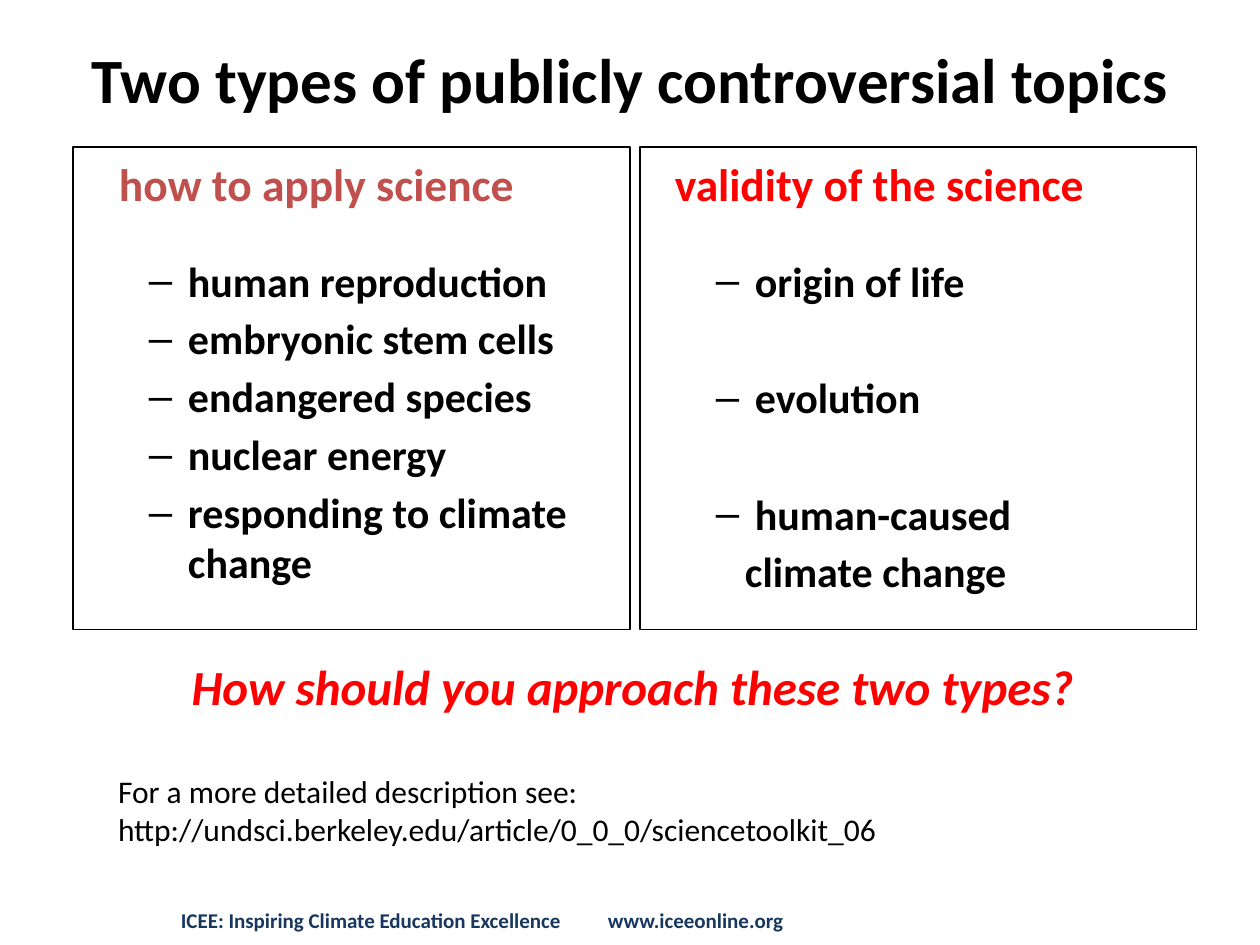
import pptx
import pptx.dml.color
import pptx.enum.shapes
import pptx.enum.text
import pptx.oxml
import pptx.oxml.ns
import pptx.util

PIXEL = 914400 // 126
BLACK = pptx.dml.color.RGBColor(0x00, 0x00, 0x00)
RED = pptx.dml.color.RGBColor(0xFF, 0x00, 0x00)
BRICK = pptx.dml.color.RGBColor(0xC0, 0x50, 0x4D)
NAVY = pptx.dml.color.RGBColor(0x17, 0x37, 0x5E)
FONT = "Calibri"
TOPICS_LEFT = [
    "human reproduction",
    "embryonic stem cells",
    "endangered species",
    "nuclear energy",
    "responding to climate change",
]
TOPICS_RIGHT = ["origin of life", "evolution", "human-caused"]
TOP = pptx.enum.text.MSO_ANCHOR.TOP
MIDDLE = pptx.enum.text.MSO_ANCHOR.MIDDLE
LEFT = pptx.enum.text.PP_ALIGN.LEFT
CENTER = pptx.enum.text.PP_ALIGN.CENTER


def px(value):
    return pptx.util.Emu(value * PIXEL)


def add_run(paragraph, text, size, color=BLACK, bold=True, italic=False):
    run = paragraph.add_run()
    run.text = text
    run.font.name = FONT
    run.font.size = pptx.util.Pt(size)
    run.font.color.rgb = color
    run.font.bold = bold
    run.font.italic = italic


def set_frame(frame, anchor=TOP, left=13, top=6):
    frame.word_wrap = True
    frame.vertical_anchor = anchor
    frame.margin_left, frame.margin_right = px(left), px(13)
    frame.margin_top = frame.margin_bottom = px(top)


def add_text_box(slide, box, alignment=LEFT, **frame_options):
    shape = slide.shapes.add_textbox(*map(px, box))
    set_frame(shape.text_frame, **frame_options)
    paragraph = shape.text_frame.paragraphs[0]
    paragraph.alignment = alignment
    return paragraph


def add_property(paragraph, tag, **attributes):
    properties = paragraph._p.get_or_add_pPr()
    element = pptx.oxml.parse_xml(f"<a:{tag} {pptx.oxml.ns.nsdecls('a')}/>")
    for name, value in attributes.items():
        element.set(name, str(value))
    properties.append(element)
    return element


def indent(paragraph, margin, first_line=0):
    properties = paragraph._p.get_or_add_pPr()
    properties.set("marL", str(px(margin)))
    properties.set("indent", str(px(first_line)))


def add_item(frame, text, space, bullet=True):
    paragraph = frame.add_paragraph()
    paragraph.alignment = LEFT
    paragraph.space_before = pptx.util.Pt(space)
    if bullet:
        indent(paragraph, 102, -39)
        add_property(paragraph, "buFont", typeface="Arial")
        add_property(paragraph, "buChar", char="–")
    else:
        indent(paragraph, 92)
    add_run(paragraph, text, 24)


def add_panel(slide, box, heading, color, heading_indent, topics, space, ending=None):
    shape = slide.shapes.add_shape(
        pptx.enum.shapes.MSO_SHAPE.RECTANGLE, *map(px, box)
    )
    shape.shadow.inherit = False
    shape.fill.background()
    shape.line.color.rgb = BLACK
    shape.line.width = pptx.util.Pt(0.75)
    frame = shape.text_frame
    set_frame(frame, top=9)
    paragraph = frame.paragraphs[0]
    paragraph.alignment = LEFT
    indent(paragraph, heading_indent)
    add_run(paragraph, heading, 26, color)
    for index, topic in enumerate(topics):
        add_item(frame, topic, space if index else 25.5)
    if ending:
        add_item(frame, ending, 4.25, bullet=False)


def add_title(slide, box):
    paragraph = add_text_box(slide, box, CENTER, top=3)
    add_run(paragraph, "Two types of publicly controversial topics", 36)


def add_question(slide, box):
    paragraph = add_text_box(slide, box, CENTER)
    add_run(paragraph, "How should you approach these two types?", 28, RED, italic=True)


def add_reference(slide, box):
    paragraph = add_text_box(slide, box)
    add_run(paragraph, "For a more detailed description see: ", 18, bold=False)
    add_run(
        paragraph,
        "http://undsci.berkeley.edu/article/0_0_0/sciencetoolkit_06",
        18,
        bold=False,
    )


def add_footer(slide, box):
    paragraph = add_text_box(slide, box, anchor=MIDDLE, left=34)
    tabs = add_property(paragraph, "tabLst")
    tab = pptx.oxml.parse_xml(f"<a:tab {pptx.oxml.ns.nsdecls('a')} algn='l'/>")
    tab.set("pos", str(px(427)))
    tabs.append(tab)
    add_run(paragraph, "ICEE: Inspiring Climate Education Excellence\t", 12, NAVY)
    add_run(paragraph, "www.iceeonline.org", 12, NAVY)


def main():
    presentation = pptx.Presentation()
    presentation.slide_width = px(1260)
    presentation.slide_height = px(945)
    slide = presentation.slides.add_slide(presentation.slide_layouts[6])
    add_title(slide, (63, 38, 1134, 157))
    add_panel(
        slide, (73, 147, 557, 483), "how to apply science", BRICK, 33,
        TOPICS_LEFT, 4.25,
    )
    add_panel(
        slide, (640, 147, 557, 483), "validity of the science", RED, 22,
        TOPICS_RIGHT, 37.75, "climate change",
    )
    add_question(slide, (105, 651, 1055, 72))
    add_reference(slide, (105, 766, 1040, 89))
    add_footer(slide, (147, 895, 672, 50))
    presentation.save("out.pptx")


if __name__ == "__main__":
    main()
